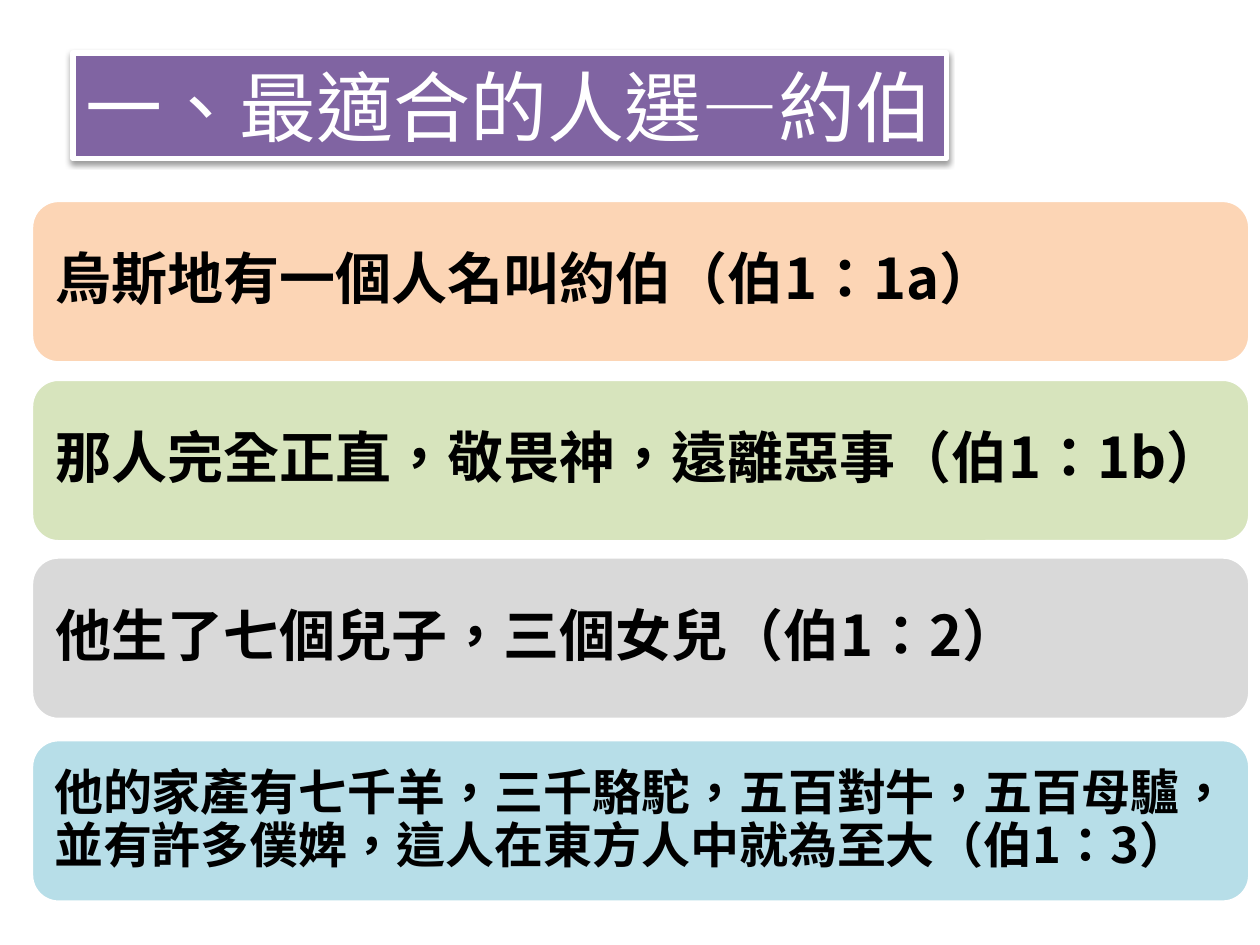
from dataclasses import dataclass

from lxml.etree import SubElement
from pptx import Presentation
from pptx.dml.color import RGBColor as RGB
from pptx.enum.lang import MSO_LANGUAGE_ID as LANG
from pptx.enum.shapes import MSO_SHAPE as SHAPE
from pptx.enum.text import MSO_ANCHOR as ANCHOR, MSO_AUTO_SIZE as AUTO
from pptx.oxml.ns import qn
from pptx.util import Inches, Pt


@dataclass
class Theme:
    title_font: str = "Calibri"
    body_font: str = "Noto Sans CJK SC"
    title_size: int = 44
    large: int = 32
    small: int = 28
    white: str = "FFFFFF"
    black: str = "000000"
    purple: str = "8064A2"
    orange: str = "FCD5B5"
    green: str = "D7E4BD"
    gray: str = "D9D9D9"
    blue: str = "B7DEE8"


class SlideBuilder:
    def __init__(self, slide, theme):
        self.s = slide
        self.theme = theme

    def box(self, shapes, kind, x, y, w, h, fill, line_width):
        sp = shapes.add_shape(kind, Inches(x), Inches(y), Inches(w), Inches(h))
        sp.shadow.inherit = False
        sp.fill.solid()
        sp.fill.fore_color.rgb = RGB.from_string(fill)
        sp.line.color.rgb = RGB.from_string(self.theme.white)
        sp.line.width = Pt(line_width)
        return sp

    def add_text(self, tf, text, font, size, color, bold=False):
        tf.vertical_anchor = ANCHOR.MIDDLE
        p = tf.paragraphs[0]
        p.font.name = font
        p.font.size = Pt(size)
        p.font.bold = bold
        p.font.color.rgb = RGB.from_string(color)
        r = p.add_run()
        r.text = text
        r.font.language_id = LANG.TRADITIONAL_CHINESE
        return p, r

    def drop_shadow(self, sp):
        effects = sp._element.spPr.find(qn("a:effectLst"))
        shadow = SubElement(effects, qn("a:outerShdw"), blurRad=str(Pt(3.1)),
                            dist=str(Pt(1.6)), dir="5400000", rotWithShape="0")
        color = SubElement(shadow, qn("a:srgbClr"), val=self.theme.black)
        SubElement(color, qn("a:alpha"), val="38000")

    def title(self, text, x, y, w, h):
        t = self.theme
        sp = self.box(self.s.shapes, SHAPE.RECTANGLE, x, y, w, h, t.purple, 3)
        self.drop_shadow(sp)
        tf = sp.text_frame
        tf.word_wrap = False
        tf.auto_size = AUTO.SHAPE_TO_FIT_TEXT
        self.add_text(tf, text, t.title_font, t.title_size, t.white)

    def verse(self, group, text, y, fill, size, inset):
        t = self.theme
        x, w, h, pad = 0.25, 9.67, 1.29, 0.06
        self.box(group.shapes, SHAPE.ROUNDED_RECTANGLE, x, y, w, h, fill, 2)
        tb = group.shapes.add_textbox(Inches(x + pad), Inches(y + pad),
                                      Inches(w - 2 * pad), Inches(h - 2 * pad))
        tf = tb.text_frame
        tf.word_wrap = True
        tf.margin_left = tf.margin_right = Inches(inset)
        tf.margin_top = tf.margin_bottom = Inches(inset)
        p, r = self.add_text(tf, text, t.body_font, size, t.black, bold=True)
        p.line_spacing = 0.9
        # East Asian typeface for the Chinese characters
        SubElement(r._r.get_or_add_rPr(), qn("a:ea"), typeface=t.body_font)


def main():
    prs = Presentation()
    prs.slide_width, prs.slide_height = Inches(10), Inches(7.5)
    theme = Theme()
    builder = SlideBuilder(prs.slides.add_slide(prs.slide_layouts[6]), theme)

    # Title
    builder.title("一、最適合的人選—約伯", 0.58, 0.42, 6.93, 0.84)

    # Verses about Job
    verses = [
        ("烏斯地有一個人名叫約伯（伯1：1a）", 1.59, theme.orange, theme.large, 0.13),
        ("那人完全正直，敬畏神，遠離惡事（伯1：1b）", 3.01, theme.green, theme.large, 0.13),
        ("他生了七個兒子，三個女兒（伯1：2）", 4.42, theme.gray, theme.large, 0.13),
        ("他的家產有七千羊，三千駱駝，五百對牛，五百母驢，並有許多僕婢，這人在東方人中就為至大（伯1：3）",
         5.87, theme.blue, theme.small, 0.12),
    ]
    group = builder.s.shapes.add_group_shape()
    for verse in verses:
        builder.verse(group, *verse)

    prs.save("out.pptx")


if __name__ == "__main__":
    main()
